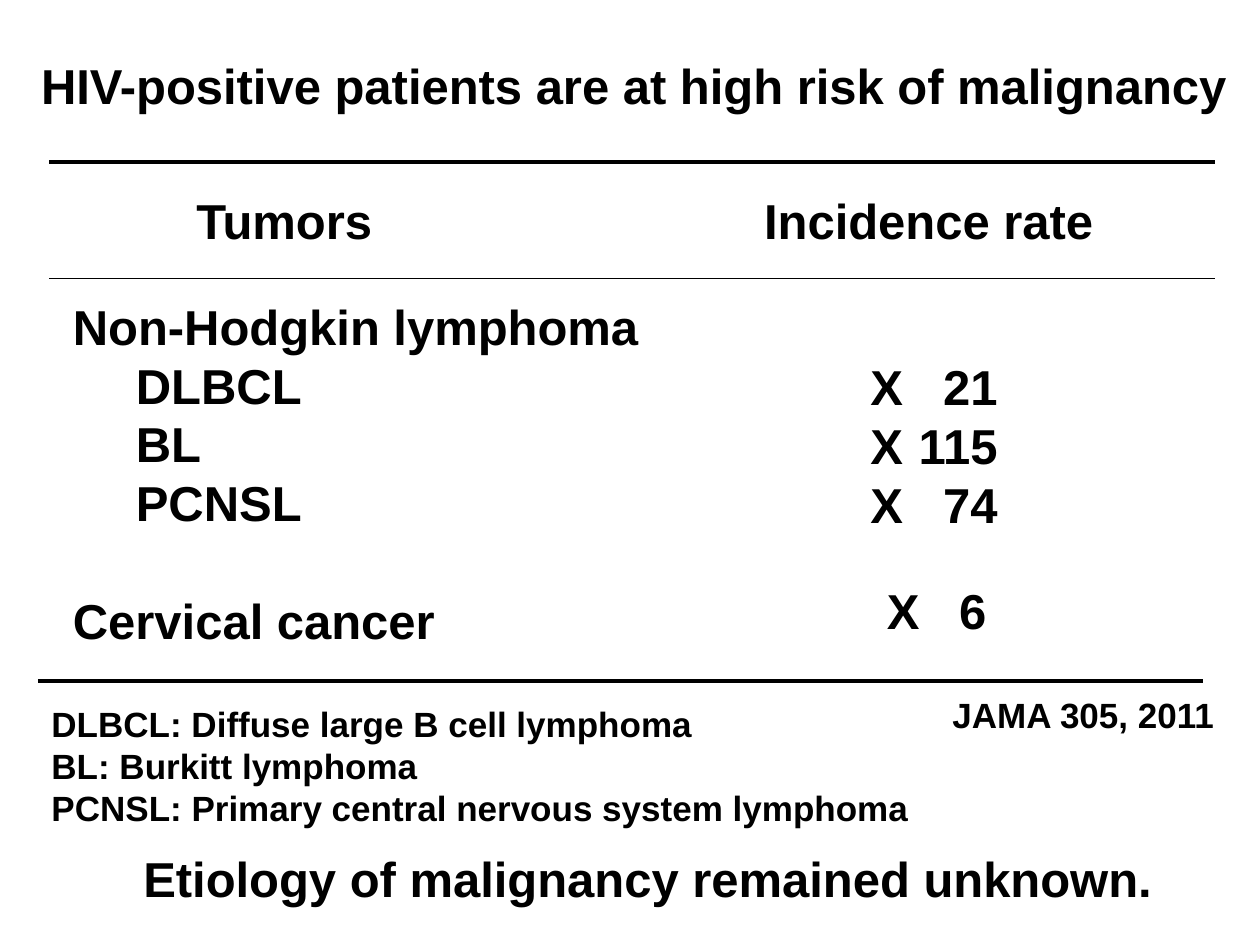
from dataclasses import dataclass

from lxml.etree import SubElement
from pptx import Presentation
from pptx.dml.color import RGBColor
from pptx.enum.shapes import MSO_CONNECTOR
from pptx.enum.text import MSO_ANCHOR, MSO_AUTO_SIZE, PP_ALIGN
from pptx.oxml.ns import qn
from pptx.util import Inches, Pt


@dataclass(frozen=True)
class Theme:
    font: str = "Arial"
    ink: RGBColor = RGBColor(0, 0, 0)
    large: int = 28
    small: int = 20
    thick: float = 2.25
    thin: float = 0.75


THEME = Theme()
LEFT, CENTER = PP_ALIGN.LEFT, PP_ALIGN.CENTER
INDENT = Inches(0.5)
ROW_GAP = Pt(33.5)

# Areas are left, top, width, height in percent of the slide.
TITLE = ("HIV-positive patients are at high risk of malignancy", (1.7, 5.2, 97.2, 7.6))
RULES = [
    (3.9, 17.1, THEME.thick),
    (3.9, 29.5, THEME.thin),
    (3.0, 72.1, THEME.thick),
]
RULE_WIDTH = 92.5
TUMORS = [
    ("Non-Hodgkin lymphoma", 0, 0),
    ("DLBCL", 1, 0),
    ("BL", 1, 0),
    ("PCNSL", 1, 0),
    ("Cervical cancer", 0, 1),
]
TUMOR_AREA = (4.8, 30.7, 48.5, 39.1)
RATES = [
    (["X\t21", "X\t115", "X\t74"], (68.1, 37.1, 12.3, 20.1), 1.01),
    (["X\t6"], (69.4, 60.8, 10.1, 7.6), 0.79),
]
TEXTS = [
    (["Tumors"], (14.6, 19.5, 16.1, 7.6), THEME.large, LEFT),
    (["Incidence rate"], (56.7, 19.5, 34.0, 7.6), THEME.large, CENTER),
    (["JAMA 305, 2011"], (74.6, 72.7, 23.0, 5.9), THEME.small, LEFT),
    (
        [
            "DLBCL: Diffuse large B cell lymphoma",
            "BL: Burkitt lymphoma",
            "PCNSL: Primary central nervous system lymphoma",
        ],
        (3.1, 73.7, 94.7, 14.8),
        THEME.small,
        LEFT,
    ),
    (["Etiology of malignancy remained unknown."], (9.9, 89.1, 83.0, 7.6), THEME.large, CENTER),
]

deck = Presentation()
deck.slide_width, deck.slide_height = Inches(10), Inches(7.5)
slide = deck.slides.add_slide(deck.slide_layouts[5])


def across(share):
    return round(deck.slide_width * share / 100)


def down(share):
    return round(deck.slide_height * share / 100)


def place(area):
    left, top, width, height = area
    return across(left), down(top), across(width), down(height)


def write(holder, lines, size=THEME.large, align=LEFT):
    frame = holder.text_frame
    frame.text = "\n".join(lines)
    frame.word_wrap = False
    frame.auto_size = MSO_AUTO_SIZE.NONE
    frame.vertical_anchor = MSO_ANCHOR.TOP
    for paragraph in frame.paragraphs:
        paragraph.alignment = align
        for run in paragraph.runs:
            run.font.name = THEME.font
            run.font.size = Pt(size)
            run.font.bold = True
            run.font.color.rgb = THEME.ink
    return frame.paragraphs


def add_text(lines, area, size=THEME.large, align=LEFT):
    return write(slide.shapes.add_textbox(*place(area)), lines, size, align)


heading, heading_area = TITLE
title = slide.shapes.title
title.left, title.top, title.width, title.height = place(heading_area)
write(title, [heading], align=CENTER)

for left, top, weight in RULES:
    rule = slide.shapes.add_connector(
        MSO_CONNECTOR.STRAIGHT, across(left), down(top), across(left + RULE_WIDTH), down(top)
    )
    rule.line.color.rgb = THEME.ink
    rule.line.width = Pt(weight)
    SubElement(rule._element.spPr, qn("a:effectLst"))

for lines, area, size, align in TEXTS:
    add_text(lines, area, size, align)

tumor_rows = add_text([name for name, _, _ in TUMORS], TUMOR_AREA)
for row, (_, level, gaps) in zip(tumor_rows, TUMORS):
    row._p.get_or_add_pPr().set("marL", str(level * INDENT))
    row.space_before = gaps * ROW_GAP

for lines, area, stop in RATES:
    for row in add_text(lines, area):
        tabs = SubElement(row._p.get_or_add_pPr(), qn("a:tabLst"))
        SubElement(tabs, qn("a:tab"), pos=str(Inches(stop)), algn="r")

deck.save("out.pptx")
